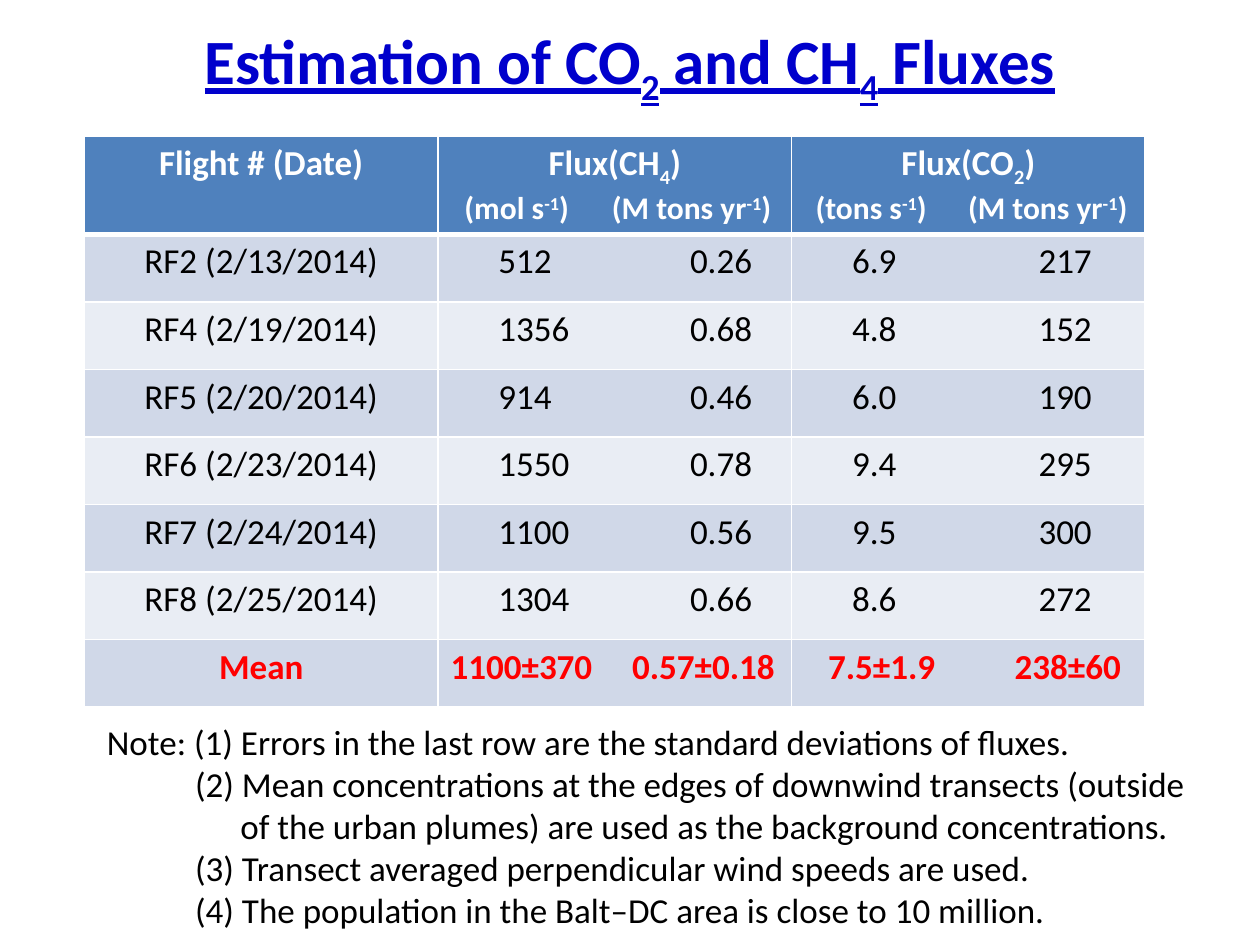
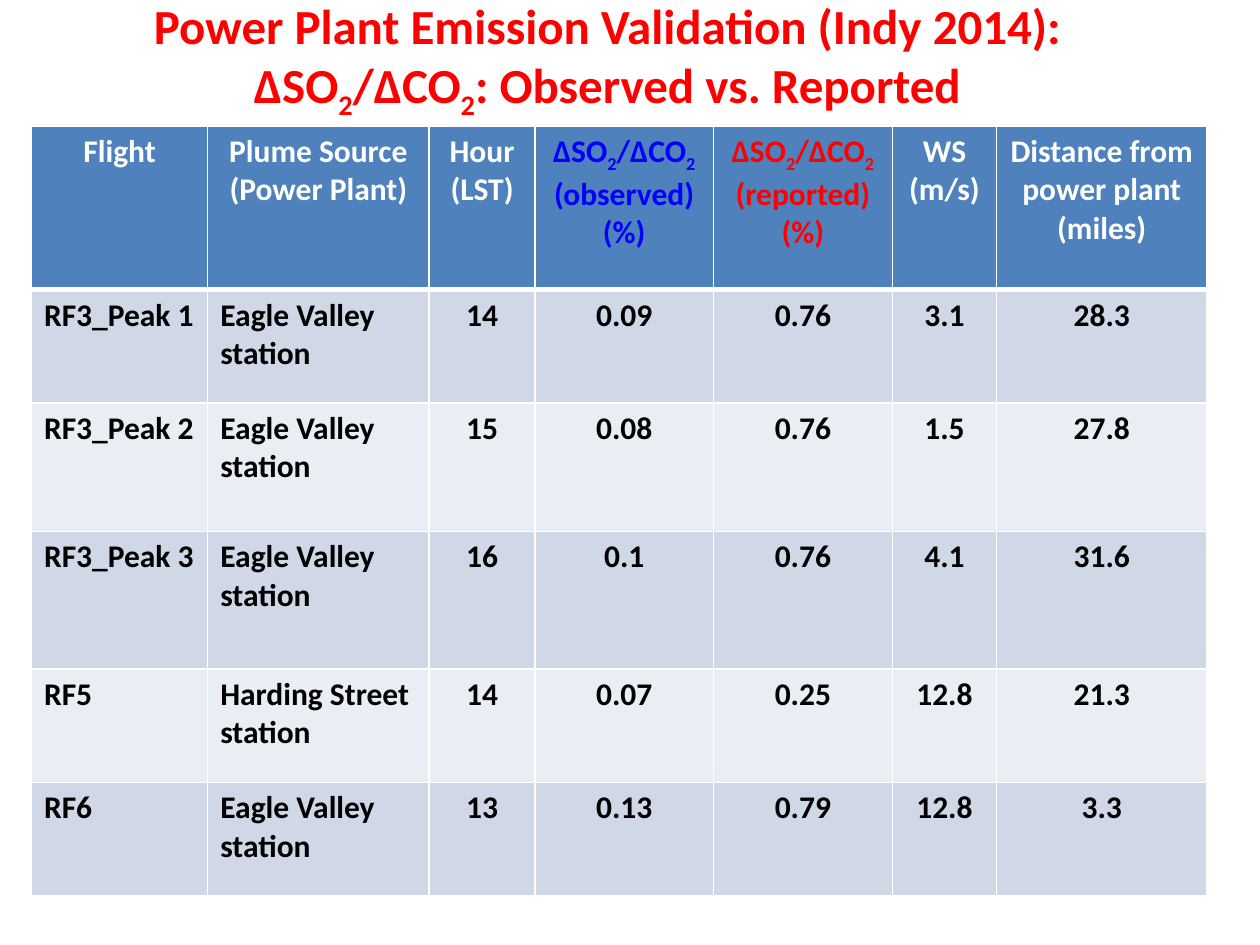
import dataclasses

import pptx
import pptx.dml.color
import pptx.enum.text
import pptx.oxml.ns
import pptx.util
from lxml import etree

ALIGN = pptx.enum.text.PP_ALIGN
COLUMNS, ROWS = 100, 75


@dataclasses.dataclass(frozen=True)
class Theme:
    font: str = "Calibri"
    navy: str = "0000CC"
    blue: str = "0000FF"
    red: str = "FF0000"
    black: str = "000000"
    white: str = "FFFFFF"
    header: str = "4F81BD"
    bands: tuple = ("D0D8E8", "E9EDF4")
    title: int = 36
    subtitle: int = 28
    body: int = 20
    small: int = 18
    thin: int = 1
    thick: int = 3


THEME = Theme()


@dataclasses.dataclass(frozen=True)
class Box:
    left: float
    top: float
    width: float
    height: float

    def lengths(self):
        unit = pptx.util.Inches(10) / COLUMNS
        return [round(side * unit) for side in dataclasses.astuple(self)]


@dataclasses.dataclass(frozen=True)
class Line:
    text: str
    size: int = THEME.body
    color: str = THEME.black
    bold: bool = False
    underline: bool = False
    align: ALIGN = ALIGN.CENTER
    stops: tuple = ()
    margin: float = 0
    indent: float = 0


def add_tab_stops(properties, stops):
    tabs = etree.SubElement(properties, pptx.oxml.ns.qn("a:tabLst"))
    for stop in stops:
        tab = etree.SubElement(tabs, pptx.oxml.ns.qn("a:tab"))
        tab.set("pos", str(pptx.util.Inches(stop)))
        tab.set("algn", "l")


def write_line(para, line):
    para.alignment = line.align
    properties = para._p.get_or_add_pPr()
    if line.margin:
        properties.set("marL", str(pptx.util.Inches(line.margin)))
        properties.set("indent", str(pptx.util.Inches(line.indent)))
    if line.stops:
        add_tab_stops(properties, line.stops)
    for index, piece in enumerate(line.text.split("|")):
        span = para.add_run()
        span.text = piece
        span.font.name = THEME.font
        span.font.size = pptx.util.Pt(line.size)
        span.font.bold = line.bold
        span.font.underline = line.underline
        span.font.color.rgb = pptx.dml.color.RGBColor.from_string(line.color)
        if index % 2:
            raised = piece.startswith("-")
            span.font._element.set("baseline", "30000" if raised else "-25000")


def write_lines(frame, lines):
    for index, line in enumerate(lines):
        para = frame.add_paragraph() if index else frame.paragraphs[0]
        write_line(para, line)


def add_text(page, box, lines, anchor):
    frame = page.shapes.add_textbox(*box.lengths()).text_frame
    frame.word_wrap = True
    frame.vertical_anchor = anchor
    write_lines(frame, lines)


def add_title(page, box, lines):
    add_text(page, box, lines, pptx.enum.text.MSO_ANCHOR.MIDDLE)


def draw_borders(cell, top, bottom):
    properties = cell._tc.get_or_add_tcPr()
    sides = {"lnL": THEME.thin, "lnR": THEME.thin, "lnT": top, "lnB": bottom}
    for index, (side, width) in enumerate(sides.items()):
        border = etree.Element(pptx.oxml.ns.qn(f"a:{side}"))
        border.set("w", str(pptx.util.Pt(width)))
        fill = etree.SubElement(border, pptx.oxml.ns.qn("a:solidFill"))
        etree.SubElement(fill, pptx.oxml.ns.qn("a:srgbClr")).set("val", THEME.white)
        properties.insert(index, border)


def share_lengths(tracks, shares, total):
    for track, share in zip(tracks, shares):
        yield track, round(total * share / sum(shares))


def add_banded_table(page, box, widths, heights, cells):
    lengths = box.lengths()
    table = page.shapes.add_table(len(heights), len(widths), *lengths).table
    table.horz_banding = False
    for column, width in share_lengths(table.columns, widths, lengths[2]):
        column.width = width
    for row, height in share_lengths(table.rows, heights, lengths[3]):
        row.height = height
    for r, row in enumerate(cells):
        color = THEME.bands[(r - 1) % 2] if r else THEME.header
        for c, lines in enumerate(row):
            cell = table.cell(r, c)
            cell.fill.solid()
            cell.fill.fore_color.rgb = pptx.dml.color.RGBColor.from_string(color)
            draw_borders(
                cell,
                THEME.thick if r == 1 else THEME.thin,
                THEME.thick if r == 0 else THEME.thin,
            )
            write_lines(cell.text_frame, lines)


def pair(first, second, stops, **style):
    text = f"\t{first}\t{second}" if stops[0] else f"{first}\t{second}"
    positions = tuple(stop for stop in stops if stop)
    return Line(text, stops=positions, align=ALIGN.LEFT, **style)


def flux_cells():
    heading = dict(color=THEME.white, bold=True)
    units = dict(size=THEME.small, **heading)
    yearly = "(M tons yr|-1|)"
    cells = [[
        [Line("Flight # (Date)", **heading)],
        [Line("Flux(CH|4|)", **heading), pair("(mol s|-1|)", yearly, (0.11, 1.28), **units)],
        [Line("Flux(CO|2|)", **heading), pair("(tons s|-1|)", yearly, (0.09, 1.3), **units)],
    ]]
    flights = [
        ("RF2 (2/13/2014)", "512", "0.26", "6.9", "217"),
        ("RF4 (2/19/2014)", "1356", "0.68", "4.8", "152"),
        ("RF5 (2/20/2014)", "914", "0.46", "6.0", "190"),
        ("RF6 (2/23/2014)", "1550", "0.78", "9.4", "295"),
        ("RF7 (2/24/2014)", "1100", "0.56", "9.5", "300"),
        ("RF8 (2/25/2014)", "1304", "0.66", "8.6", "272"),
    ]
    for flight, methane, methane_year, carbon, carbon_year in flights:
        cells.append([
            [Line(flight)],
            [pair(methane, methane_year, (0.38, 1.9))],
            [pair(carbon, carbon_year, (0.38, 1.86))],
        ])
    mean = dict(color=THEME.red, bold=True)
    cells.append([
        [Line("Mean", **mean)],
        [pair("1100±370", "0.57±0.18", (0, 1.44), **mean)],
        [pair("7.5±1.9", "238±60", (0.19, 1.67), **mean)],
    ])
    return cells


def add_notes(page, box):
    notes = [
        "Note: (1) Errors in the last row are the standard deviations of fluxes.",
        "(2) Mean concentrations at the edges of downwind transects (outside "
        "of the urban plumes) are used as the background concentrations.",
        "(3) Transect averaged perpendicular wind speeds are used.",
        "(4) The population in the Balt–DC area is close to 10 million.",
    ]
    lines = [
        Line(note, align=ALIGN.LEFT, margin=1.06, indent=-0.36 if index else -1.06)
        for index, note in enumerate(notes)
    ]
    add_text(page, box, lines, pptx.enum.text.MSO_ANCHOR.TOP)


def build_flux_slide(page):
    title = Line("Estimation of CO|2| and CH|4| Fluxes", THEME.title, THEME.navy, True, True)
    add_title(page, Box(5, 0.4, 90, 9.5), [title])
    add_banded_table(
        page, Box(6.7, 10.8, 84.2, 45.3), [1] * 3, [0.78] + [0.54] * 7, flux_cells()
    )
    add_notes(page, Box(7.5, 56.7, 89.2, 17.8))


def plant_cells():
    ratio = "ΔSO|2|/ΔCO|2|"
    headings = [
        ("Flight", THEME.white),
        ("Plume Source\n(Power Plant)", THEME.white),
        ("Hour\n(LST)", THEME.white),
        (f"{ratio} (observed) (%)", THEME.blue),
        (f"{ratio} (reported) (%)", THEME.red),
        ("WS (m/s)", THEME.white),
        ("Distance from power plant (miles)", THEME.white),
    ]
    eagle, harding = "Eagle Valley station", "Harding Street station"
    plumes = [
        ("RF3_Peak 1", eagle, "14", "0.09", "0.76", "3.1", "28.3"),
        ("RF3_Peak 2", eagle, "15", "0.08", "0.76", "1.5", "27.8"),
        ("RF3_Peak 3", eagle, "16", "0.1", "0.76", "4.1", "31.6"),
        ("RF5", harding, "14", "0.07", "0.25", "12.8", "21.3"),
        ("RF6", eagle, "13", "0.13", "0.79", "12.8", "3.3"),
    ]
    header = [
        [Line(part, THEME.small, color, True) for part in text.split("\n")]
        for text, color in headings
    ]
    body = [
        [
            [Line(text, THEME.small, bold=True, align=ALIGN.LEFT if c < 2 else ALIGN.CENTER)]
            for c, text in enumerate(plume)
        ]
        for plume in plumes
    ]
    return [header] + body


def build_plant_slide(page):
    titles = [
        "Power Plant Emission Validation (Indy 2014):",
        "ΔSO|2|/ΔCO|2|: Observed vs. Reported",
    ]
    lines = [Line(text, THEME.subtitle, THEME.red, True) for text in titles]
    add_title(page, Box(10.1, 1.7, 76.2, 5.9), lines)
    add_banded_table(
        page,
        Box(2.5, 10, 93.3, 61.1),
        [1.4, 1.76, 0.84, 1.42, 1.42, 0.83, 1.67],
        [1.3, 0.9, 1.02, 1.09, 0.9, 0.9],
        plant_cells(),
    )


def main():
    deck = pptx.Presentation()
    deck.slide_width = pptx.util.Inches(10)
    deck.slide_height = deck.slide_width * ROWS // COLUMNS
    for build in (build_flux_slide, build_plant_slide):
        build(deck.slides.add_slide(deck.slide_layouts[6]))
    deck.save("out.pptx")


if __name__ == "__main__":
    main()
